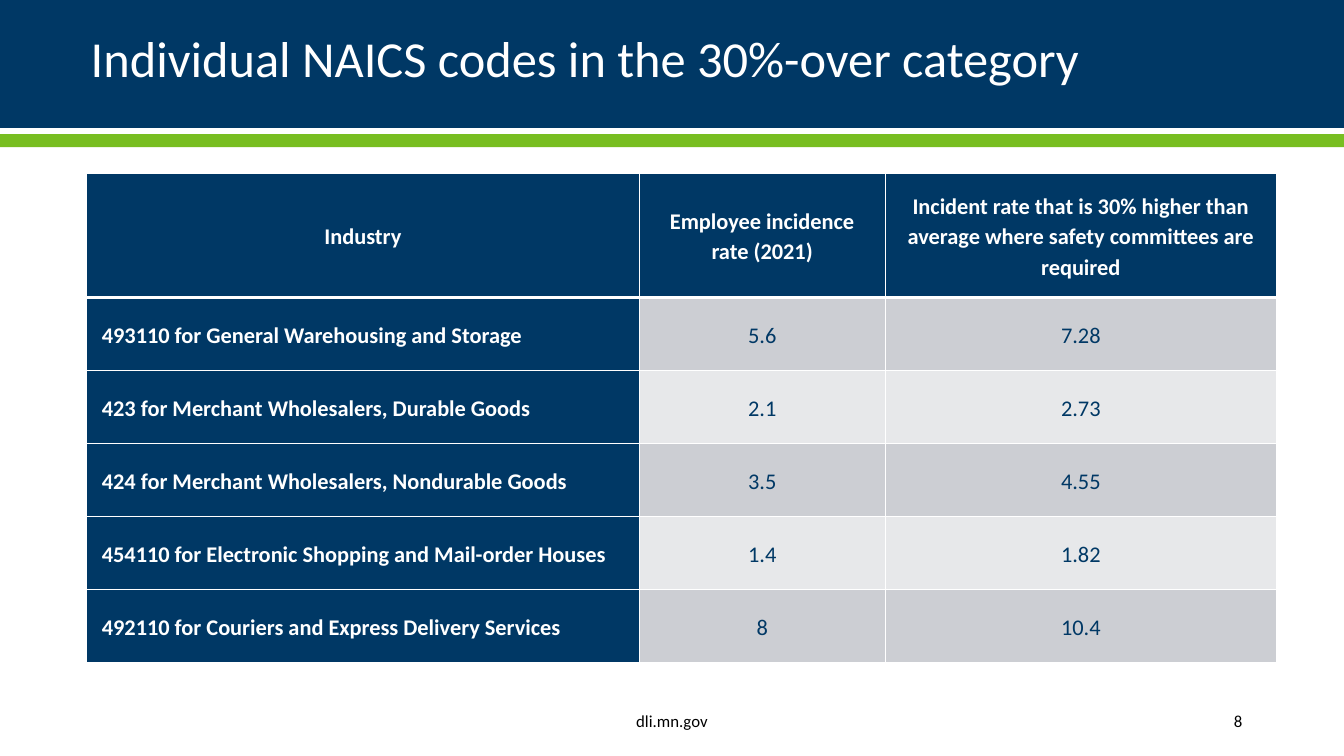
"""Build the slide of individual NAICS codes in the 30%-over category."""
from lxml import etree
from pptx import Presentation
from pptx.dml.color import RGBColor
from pptx.enum.shapes import MSO_SHAPE
from pptx.enum.text import MSO_ANCHOR, PP_ALIGN
from pptx.oxml.ns import qn
from pptx.util import Inches, Pt

RECTANGLE = MSO_SHAPE.RECTANGLE
MIDDLE = MSO_ANCHOR.MIDDLE
LEFT, CENTER, RIGHT = PP_ALIGN.LEFT, PP_ALIGN.CENTER, PP_ALIGN.RIGHT

FONT = "Calibri"
NAVY, GREEN, WHITE, BLACK = "003865", "78BE21", "FFFFFF", "000000"
BANDS = ("CCCED3", "E7E8EA")

TITLE = "Individual NAICS codes in the 30%-over category"
HEADER = (
    "Industry",
    "Employee incidence rate (2021)",
    "Incident rate that is 30% higher than average where safety committees are required",
)
INDUSTRIES = [
    ("493110 for General Warehousing and Storage", "5.6", "7.28"),
    ("423 for Merchant Wholesalers, Durable Goods", "2.1", "2.73"),
    ("424 for Merchant Wholesalers, Nondurable Goods", "3.5", "4.55"),
    ("454110 for Electronic Shopping and Mail-order Houses", "1.4", "1.82"),
    ("492110 for Couriers and Express Delivery Services", "8", "10.4"),
]
FOOTERS = [
    ("dli.mn.gov", 3.61, 6.11, CENTER),
    ("8", 10.82, 1.6, RIGHT),
]
SLIDE_WIDTH, SLIDE_HEIGHT = 13.33, 7.5
TABLE_LEFT, TABLE_TOP = 0.86, 1.72
COLUMN_WIDTHS = (5.48, 2.44, 3.88)
HEADER_HEIGHT, ROW_HEIGHT = 1.23, 0.725


def color(value):
    return RGBColor.from_string(value)


def write(text_frame, text, size, text_color, alignment=LEFT, bold=False):
    text_frame.text = text
    text_frame.word_wrap = True
    text_frame.vertical_anchor = MIDDLE
    paragraph = text_frame.paragraphs[0]
    paragraph.alignment = alignment
    font = paragraph.runs[0].font
    font.name, font.size, font.bold = FONT, Pt(size), bold
    font.color.rgb = color(text_color)
    return paragraph


def add_bar(slide, top, height, fill):
    bar = slide.shapes.add_shape(
        RECTANGLE, 0, Inches(top), Inches(SLIDE_WIDTH), Inches(height))
    bar.shadow.inherit = False
    bar.fill.solid()
    bar.fill.fore_color.rgb = color(fill)
    bar.line.fill.background()
    return bar


def set_borders(cell, bottom_width):
    properties = cell._tc.get_or_add_tcPr()
    widths = {"a:lnL": 1, "a:lnR": 1, "a:lnT": 1, "a:lnB": bottom_width}
    for position, (tag, width) in enumerate(widths.items()):
        line = etree.Element(qn(tag), w=str(Pt(width)))
        fill = etree.SubElement(line, qn("a:solidFill"))
        etree.SubElement(fill, qn("a:srgbClr"), val=WHITE)
        properties.insert(position, line)


def fill_cell(cell, text, row, column):
    is_heading = row == 0 or column == 0
    alignment = LEFT if row and column == 0 else CENTER
    paragraph = write(cell.text_frame, text, 16,
                      WHITE if is_heading else NAVY, alignment, is_heading)
    paragraph.line_spacing = 1.12
    paragraph.space_before = paragraph.space_after = Pt(10)
    cell.vertical_anchor = MIDDLE
    cell.margin_left = cell.margin_right = Inches(0.15)
    cell.margin_top = cell.margin_bottom = Inches(0.1)
    cell.fill.solid()
    cell.fill.fore_color.rgb = color(
        NAVY if is_heading else BANDS[(row - 1) % 2])
    set_borders(cell, 1 if row else 3)


def add_industry_table(slide):
    rows = [HEADER, *INDUSTRIES]
    heights = [HEADER_HEIGHT] + [ROW_HEIGHT] * len(INDUSTRIES)
    table = slide.shapes.add_table(
        len(rows), len(HEADER), Inches(TABLE_LEFT), Inches(TABLE_TOP),
        Inches(sum(COLUMN_WIDTHS)), Inches(sum(heights))).table
    for column, width in zip(table.columns, COLUMN_WIDTHS):
        column.width = Inches(width)
    for row, height in zip(table.rows, heights):
        row.height = Inches(height)
    for row, texts in enumerate(rows):
        for column, text in enumerate(texts):
            fill_cell(table.cell(row, column), text, row, column)


def main():
    presentation = Presentation()
    presentation.slide_width = Inches(SLIDE_WIDTH)
    presentation.slide_height = Inches(SLIDE_HEIGHT)
    slide = presentation.slides.add_slide(presentation.slide_layouts[6])

    add_bar(slide, 1.33, 0.13, GREEN)
    title_frame = add_bar(slide, -0.06, 1.33, NAVY).text_frame
    title_frame.margin_left = title_frame.margin_right = Inches(0.9)
    write(title_frame, TITLE, 36, WHITE).line_spacing = 0.9

    add_industry_table(slide)

    for text, left, width, alignment in FOOTERS:
        box = slide.shapes.add_textbox(
            Inches(left), Inches(6.95), Inches(width), Inches(0.4))
        write(box.text_frame, text, 12, BLACK, alignment)

    presentation.save("out.pptx")


if __name__ == "__main__":
    main()
